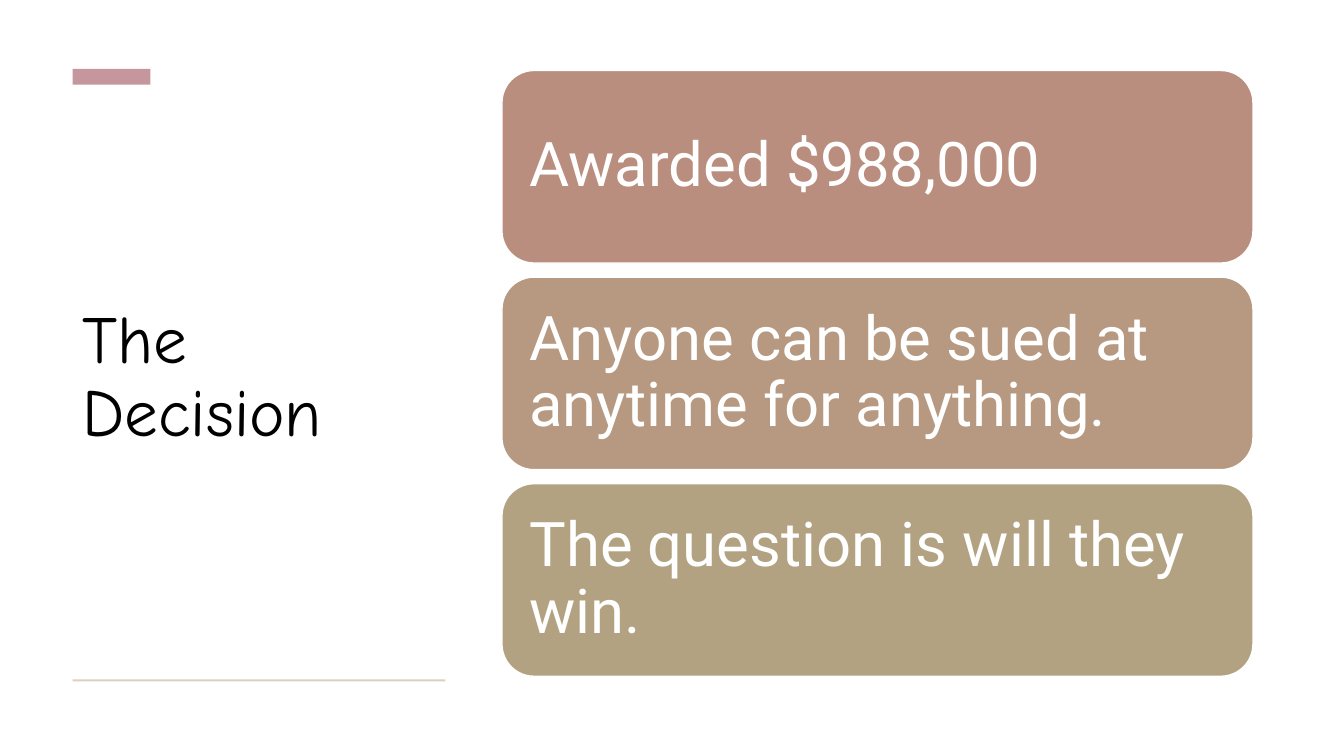
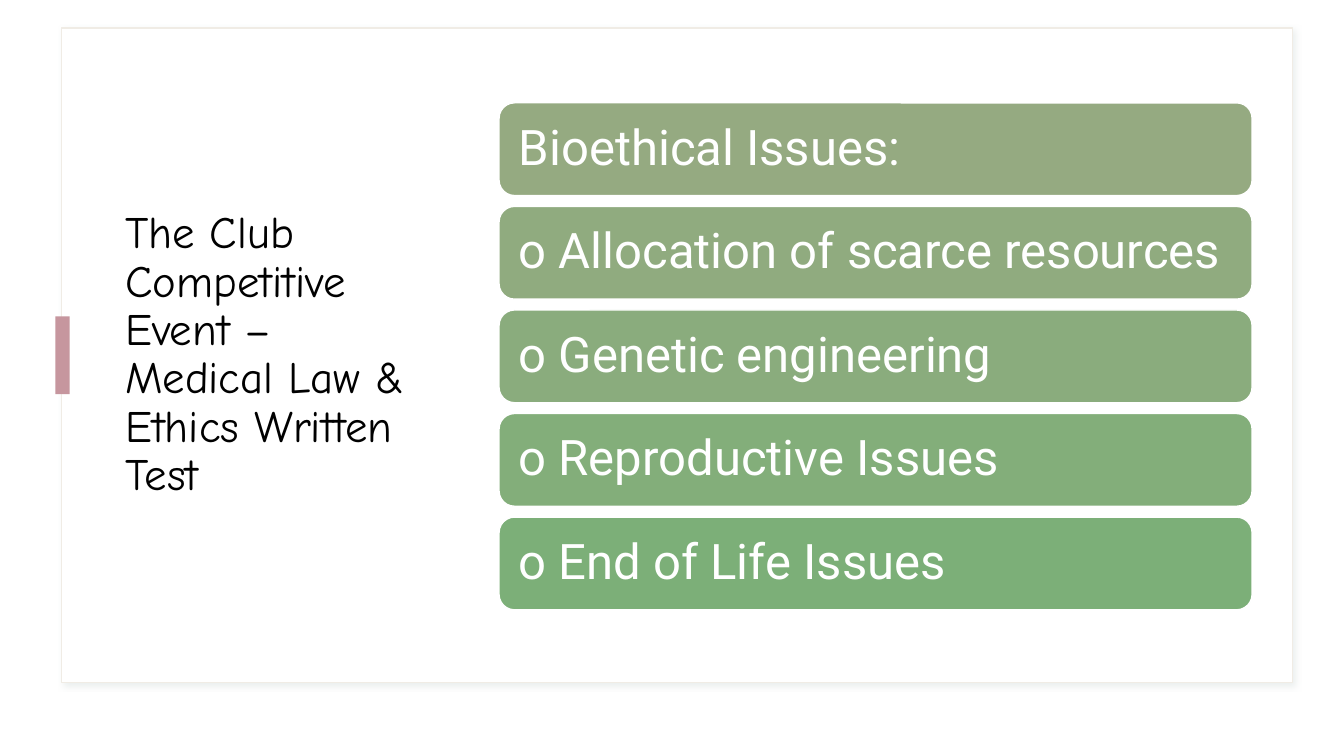
import pptx
import pptx.dml.color
import pptx.enum.shapes
import pptx.enum.text
import pptx.oxml
import pptx.oxml.ns
import pptx.util

RGBColor = pptx.dml.color.RGBColor
SHAPE = pptx.enum.shapes.MSO_SHAPE

# Shared look
BLACK = RGBColor(0x00, 0x00, 0x00)
WHITE = RGBColor(0xFF, 0xFF, 0xFF)
ROSE = RGBColor(0xC6, 0x96, 0x9E)
SAND = RGBColor(0xDB, 0xD0, 0xBD)
FRAME_LINE = RGBColor(0xF0, 0xEC, 0xE5)
CLAY = RGBColor(0xBA, 0x8E, 0x7F)
TAN = RGBColor(0xB6, 0x99, 0x80)
KHAKI = RGBColor(0xB2, 0xA2, 0x81)
SAGE = RGBColor(0x95, 0xAA, 0x81)
MOSS = RGBColor(0x90, 0xAB, 0x7F)
FERN = RGBColor(0x8A, 0xAC, 0x7D)
LEAF = RGBColor(0x83, 0xAE, 0x7A)
GREEN = RGBColor(0x7C, 0xAF, 0x78)
TITLE_FONT = "Comic Neue"
BODY_FONT = "Roboto"
FRAME_SHADOW = (
    '<a:effectLst %s><a:outerShdw blurRad="50800" dist="38100" dir="2700000">'
    '<a:srgbClr val="BCCAC7"><a:alpha val="30000"/></a:srgbClr>'
    '</a:outerShdw></a:effectLst>' % pptx.oxml.ns.nsdecls("a"))

presentation = pptx.Presentation()
presentation.slide_width = pptx.util.Inches(13.33)
presentation.slide_height = pptx.util.Inches(7.5)

# Grid of 100 columns by 100 rows; boxes are left, top, width, height
COLUMN = presentation.slide_width / 100
ROW = presentation.slide_height / 100


def write(shape, text, *, font, size, color, inset_x, inset_y):
    frame = shape.text_frame
    frame.word_wrap = True
    frame.auto_size = pptx.enum.text.MSO_AUTO_SIZE.NONE
    frame.vertical_anchor = pptx.enum.text.MSO_ANCHOR.MIDDLE
    frame.margin_left = frame.margin_right = pptx.util.Inches(inset_x)
    frame.margin_top = frame.margin_bottom = pptx.util.Inches(inset_y)
    paragraph = frame.paragraphs[0]
    paragraph.alignment = pptx.enum.text.PP_ALIGN.LEFT
    paragraph.line_spacing = 0.9
    run = paragraph.add_run()
    run.text = text
    run.font.name = font
    run.font.size = pptx.util.Pt(size)
    run.font.color.rgb = color


def add_box(slide, kind, box, fill, line=None):
    left, top, width, height = box
    shape = slide.shapes.add_shape(
        kind, round(left * COLUMN), round(top * ROW),
        round(width * COLUMN), round(height * ROW))
    shape.shadow.inherit = False
    shape.fill.solid()
    shape.fill.fore_color.rgb = fill
    if line is None:
        shape.line.fill.background()
    else:
        shape.line.color.rgb = line
        shape.line.width = pptx.util.Pt(1)
    return shape


slide_plans = [
    dict(title="The Decision", title_size=48, title_box=(5.4, 14, 27.75, 72.13),
         frame=None,
         accents=[((5.4, 9.1, 5.8, 2.1), ROSE), ((5.4, 89.87, 27.75, 0.27), SAND)],
         first_card=(37.35, 9.33, 55.88, 25.47), pitch=27.33,
         card_size=44, card_inset=0.18,
         cards=[("Awarded $988,000", CLAY),
                ("Anyone can be sued at anytime for anything.", TAN),
                ("The question is will they win.", KHAKI)]),
    dict(title="The Club Competitive Event – Medical Law & Ethics Written Test",
         title_size=32, title_box=(8.55, 7.33, 24.53, 79.33),
         frame=(4.58, 3.73, 91.58, 86.53),
         accents=[((4.13, 41.87, 1.05, 10.27), ROSE)],
         first_card=(37.13, 13.6, 56.03, 12.27), pitch=13.7,
         card_size=35, card_inset=0.15,
         cards=[("Bioethical Issues:", SAGE),
                ("o Allocation of scarce resources", MOSS),
                ("o Genetic engineering", FERN),
                ("o Reproductive Issues", LEAF),
                ("o End of Life Issues", GREEN)]),
]

for plan in slide_plans:
    slide = presentation.slides.add_slide(presentation.slide_layouts[5])

    # Title
    title = slide.shapes.title
    left, top, width, height = plan["title_box"]
    title.left, title.width = round(left * COLUMN), round(width * COLUMN)
    title.top, title.height = round(top * ROW), round(height * ROW)
    write(title, plan["title"], font=TITLE_FONT, size=plan["title_size"],
          color=BLACK, inset_x=0.1, inset_y=0.05)
    title.text_frame.margin_right = pptx.util.Inches(0.2)

    # Shadowed frame behind the title
    if plan["frame"]:
        frame = add_box(slide, SHAPE.RECTANGLE, plan["frame"], WHITE, FRAME_LINE)
        properties = frame.element.spPr
        properties.remove(properties.find(pptx.oxml.ns.qn("a:effectLst")))
        properties.append(pptx.oxml.parse_xml(FRAME_SHADOW))
        title.element.addprevious(frame.element)

    # Accent bar and rule
    for box, color in plan["accents"]:
        add_box(slide, SHAPE.RECTANGLE, box, color)

    # Stacked cards
    left, top, width, height = plan["first_card"]
    for index, (text, color) in enumerate(plan["cards"]):
        box = (left, top + index * plan["pitch"], width, height)
        card = add_box(slide, SHAPE.ROUNDED_RECTANGLE, box, color, WHITE)
        write(card, text, font=BODY_FONT, size=plan["card_size"], color=WHITE,
              inset_x=plan["card_inset"], inset_y=plan["card_inset"])

presentation.save("out.pptx")
